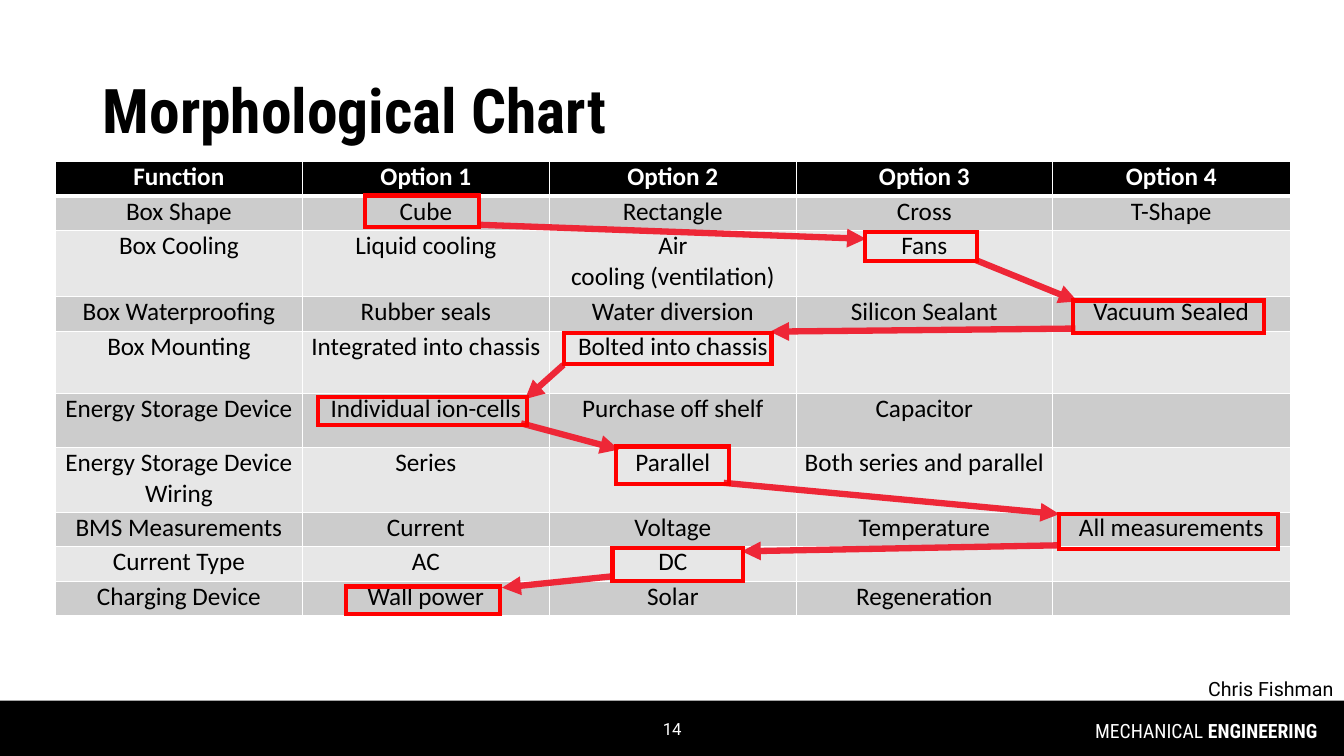
from lxml import etree
from pptx import Presentation
from pptx.dml.color import RGBColor
from pptx.enum.shapes import MSO_CONNECTOR as Connector, MSO_SHAPE as Shape
from pptx.enum.text import MSO_ANCHOR as Anchor, MSO_AUTO_SIZE as AutoSize, PP_ALIGN as Align
from pptx.oxml.ns import qn
from pptx.util import Pt

COLORS = {
    "black": "000000", "white": "FFFFFF", "dark_band": "CCCCCC",
    "light_band": "E7E7E7", "choice": "FF0000", "arrow": "EE2737",
}
HARD_SPACE = chr(160)
ROWS = [
    ("Function", "Option 1", "Option 2", "Option 3", "Option 4"),
    ("Box Shape", "Cube", "Rectangle", "Cross", "T-Shape"),
    ("Box Cooling", "Liquid cooling", f"Air cooling{HARD_SPACE}(ventilation)", "Fans", ""),
    ("Box Waterproofing", "Rubber seals", "Water diversion", f"Silicon{HARD_SPACE}Sealant",
     "Vacuum Sealed"),
    ("Box Mounting", "Integrated into chassis", "Bolted into chassis", "", ""),
    ("Energy Storage Device", "Individual ion-cells", "Purchase off shelf", "Capacitor", ""),
    ("Energy Storage Device Wiring", "Series", "Parallel", "Both series and parallel", ""),
    ("BMS Measurements", "Current", "Voltage", "Temperature", "All measurements"),
    ("Current Type", "AC", "DC", "", ""),
    ("Charging Device", "Wall power", "Solar", "Regeneration", ""),
]
COLUMN_WIDTHS = [176.4, 176.4, 176.4, 182.9, 169.9]
ROW_HEIGHTS = [24.9, 24.5, 47.5, 24.5, 44.6, 38.6, 46.4, 24.5, 24.5, 24.5]
CHOICES = [
    (260.6, 139.7, 81.8, 22.5),
    (617.8, 165.6, 80.3, 20.9),
    (766.3, 214.6, 136.8, 23.4),
    (402.8, 237.8, 148.3, 22.3),
    (227, 283.8, 149.3, 19.6),
    (439.9, 319, 80.6, 26.6),
    (756.7, 367.2, 156.2, 24.8),
    (437.5, 391.2, 93.2, 23.8),
    (247.4, 419, 109.6, 19.4),
]
ARROWS = [
    (343.4, 160.6, 618.5, 170.6),
    (697, 185.8, 769.7, 215.3),
    (768.2, 234.7, 550.1, 236.9),
    (402.5, 260.6, 375.1, 285.1),
    (372.2, 302.4, 442.1, 321.1),
    (517, 344.9, 756.7, 367.2),
    (757.4, 389.5, 529.9, 393.8),
    (436, 411.8, 358.6, 419.8),
]


def color(name):
    return RGBColor.from_string(COLORS[name])


def points(values):
    return [Pt(value) for value in values]


def write(frame, *texts, font, size, ink="black", bold=(False,), align=Align.LEFT,
          anchor=Anchor.TOP, spacing=1.0):
    frame.word_wrap = True
    frame.vertical_anchor = anchor
    para = frame.paragraphs[0]
    para.alignment = align
    para.line_spacing = spacing
    para.space_before = Pt(0)
    for text, heavy in zip(texts, bold):
        span = para.add_run()
        span.text = text
        span.font.name = font
        span.font.size = Pt(size)
        span.font.bold = heavy
        span.font.color.rgb = color(ink)


def place(shape, left, top, width, height):
    shape.left, shape.top, shape.width, shape.height = points((left, top, width, height))
    shape.text_frame.auto_size = AutoSize.NONE
    return shape.text_frame


def border(cell, widths):
    properties = cell._tc.get_or_add_tcPr()
    for position, (side, width) in enumerate(zip("LRTB", widths)):
        line = etree.Element(qn(f"a:ln{side}"), w=str(Pt(width)))
        fill = etree.SubElement(line, qn("a:solidFill"))
        etree.SubElement(fill, qn("a:srgbClr"), val=COLORS["white"])
        properties.insert(position, line)


def add_options(page):
    table = page.shapes.add_table(
        len(ROWS), len(COLUMN_WIDTHS),
        *points((39.6, 115.2, sum(COLUMN_WIDTHS), sum(ROW_HEIGHTS)))).table
    for column, width in zip(table.columns, COLUMN_WIDTHS):
        column.width = Pt(width)
    for index, (texts, height) in enumerate(zip(ROWS, ROW_HEIGHTS)):
        table.rows[index].height = Pt(height)
        header = index == 0
        band = "black" if header else "dark_band" if index % 2 else "light_band"
        for cell, text in zip(table.rows[index].cells, texts):
            cell.margin_left = cell.margin_right = Pt(5)
            cell.margin_top = cell.margin_bottom = Pt(0)
            cell.fill.solid()
            cell.fill.fore_color.rgb = color(band)
            border(cell, (1, 1, 3 if index == 1 else 1, 3 if header else 1))
            if text:
                write(cell.text_frame, text, font="Calibri", size=18, bold=(header,),
                      ink="white" if header else "black", align=Align.CENTER)


def add_arrow(page, ends):
    arrow = page.shapes.add_connector(Connector.STRAIGHT, *points(ends))
    arrow.line.width = Pt(4.5)
    arrow.line.color.rgb = color("arrow")
    etree.SubElement(arrow.line._get_or_add_ln(), qn("a:tailEnd"), type="triangle")
    etree.SubElement(arrow._element.spPr, qn("a:effectLst"))


def add_choice(page, area):
    box = page.shapes.add_shape(Shape.RECTANGLE, *points(area))
    box.shadow.inherit = False
    box.fill.background()
    box.line.width = Pt(3)
    box.line.color.rgb = color("choice")
    etree.SubElement(box.line._get_or_add_ln(), qn("a:miter"), lim="800000")


def main():
    deck = Presentation()
    deck.slide_width, deck.slide_height = Pt(960), Pt(540)
    page = deck.slides.add_slide(deck.slide_layouts[1])
    title, author = page.placeholders

    footer = page.shapes.add_shape(Shape.RECTANGLE, *points((0, 500.4, 960, 39.6)))
    footer.shadow.inherit = False
    footer.fill.solid()
    footer.fill.fore_color.rgb = color("black")
    footer.line.fill.background()

    department = page.shapes.add_textbox(*points((732.2, 509.8, 216, 28.8)))
    write(department.text_frame, "MECHANICAL ", "ENGINEERING", font="Roboto Condensed",
          size=14, ink="white", bold=(False, True), align=Align.RIGHT)
    number = page.shapes.add_textbox(*points((372.2, 506.5, 216, 28.8)))
    write(number.text_frame, "14", font="Roboto", size=12, ink="white",
          align=Align.CENTER, anchor=Anchor.MIDDLE)

    write(place(title, 66.2, 28.8, 828, 104.4), "Morphological Chart",
          font="Roboto Condensed", size=44, bold=(True,), anchor=Anchor.MIDDLE, spacing=0.9)
    author_frame = place(author, 707.8, 481.7, 252, 18)
    properties = author_frame.paragraphs[0]._p.get_or_add_pPr()
    properties.set("marL", "0")
    properties.set("indent", "0")
    etree.SubElement(properties, qn("a:buNone"))
    write(author_frame, "Chris Fishman", font="Roboto", size=14,
          align=Align.RIGHT, spacing=0.9)

    add_options(page)
    for ends in ARROWS:
        add_arrow(page, ends)
    for area in CHOICES:
        add_choice(page, area)
    deck.save("out.pptx")


if __name__ == "__main__":
    main()
